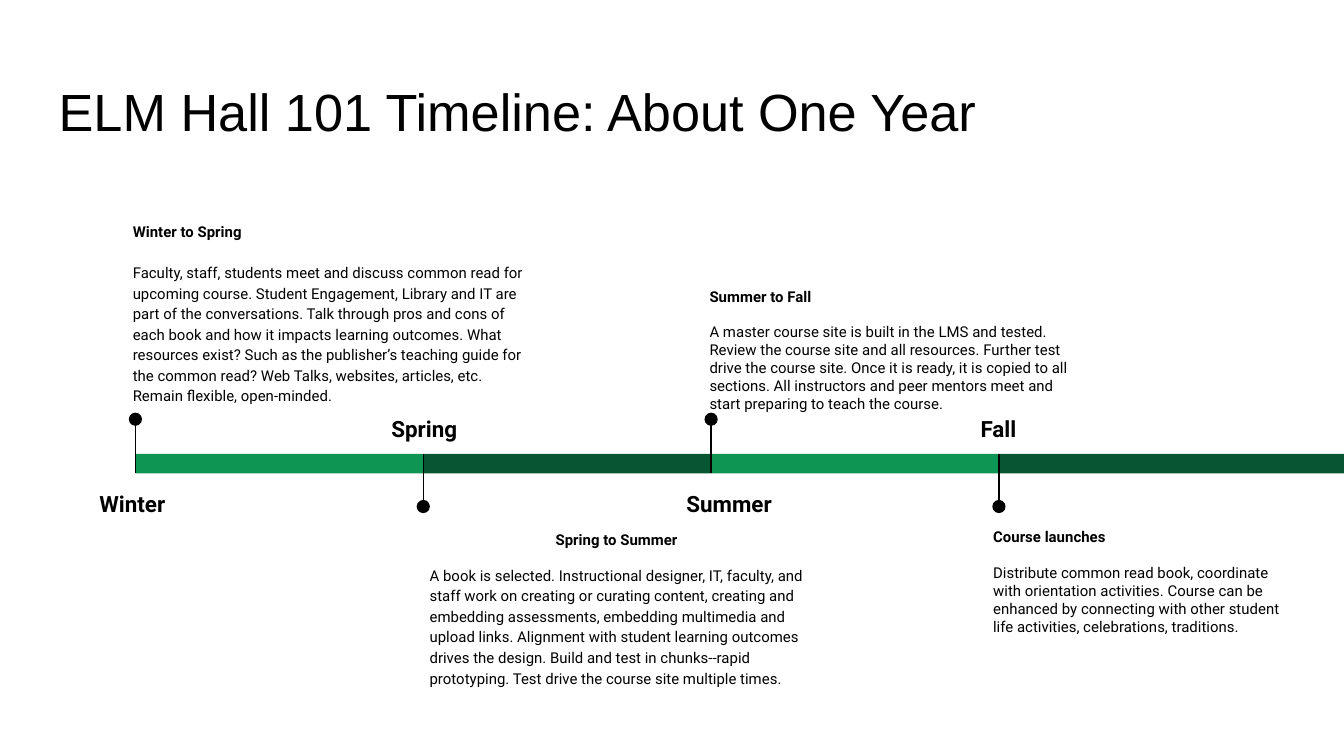
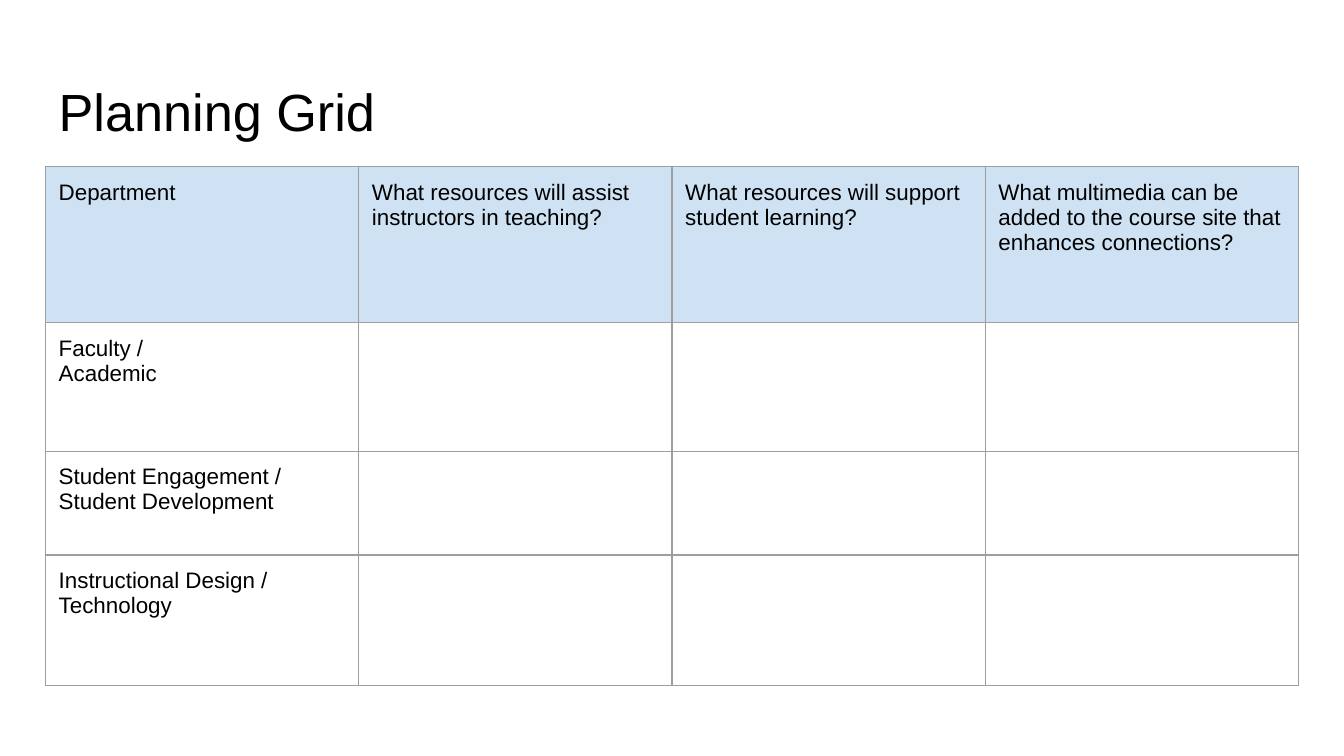
import pptx
import pptx.dml.color
import pptx.enum.shapes
import pptx.enum.text
import pptx.oxml
import pptx.oxml.ns
import pptx.util
from pptx.util import Cm

COLORS = {"text": "000000", "light": "0E9453", "dark": "085631",
          "header": "CFE2F3", "border": "9E9E9E"}
TITLE = {"name": "Arial", "size": 28}
LABEL = {"name": "Roboto", "size": 12, "bold": True}
HEADING = {"name": "Roboto", "size": 8, "bold": True}
BODY = {"name": "Roboto", "size": 8, "bold": False}
CELL = {"name": "Arial", "size": 12}
LEFT = pptx.enum.text.PP_ALIGN.LEFT
CENTER = pptx.enum.text.PP_ALIGN.CENTER
SHAPE = pptx.enum.shapes.MSO_SHAPE
INSET = 0.25


def rgb(name):
    return pptx.dml.color.RGBColor.from_string(COLORS[name])


class Deck:
    def __init__(self):
        self.prs = pptx.Presentation()
        self.prs.slide_width, self.prs.slide_height = Cm(25.4), Cm(14.29)
        self.s = None

    def slide(self, title):
        self.s = self.prs.slides.add_slide(self.prs.slide_layouts[5])
        sp = self.s.shapes.title
        sp.left, sp.top, sp.width, sp.height = Cm(0.86), Cm(1.24), Cm(23.67), Cm(1.6)
        tf = self.frame(sp)
        self.add_text(tf.paragraphs[0], title, TITLE)

    def frame(self, sp):
        tf = sp.text_frame
        settings = {"word_wrap": True,
                    "auto_size": pptx.enum.text.MSO_AUTO_SIZE.NONE,
                    "vertical_anchor": pptx.enum.text.MSO_ANCHOR.TOP}
        for side in ("left", "top", "right", "bottom"):
            settings["margin_" + side] = Cm(INSET)
        for key, value in settings.items():
            setattr(tf, key, value)
        return tf

    def add_text(self, p, text, font, **layout):
        r = p.add_run()
        r.text = text
        for key, value in font.items():
            setattr(r.font, key, pptx.util.Pt(value) if key == "size" else value)
        r.font.color.rgb = rgb("text")
        for key, value in {"alignment": LEFT, **layout}.items():
            setattr(p, key, value)

    def textbox(self, x, y, w, h):
        return self.frame(self.s.shapes.add_textbox(Cm(x), Cm(y), Cm(w), Cm(h)))

    def label(self, text, x, y, w):
        tf = self.textbox(x, y, w, 1.04)
        self.add_text(tf.paragraphs[0], text, LABEL, alignment=CENTER, line_spacing=1.15)

    def note(self, box, heading, body, gap, spacing, align):
        tf = self.textbox(*box)
        self.add_text(tf.paragraphs[0], heading, HEADING, alignment=align,
                      line_spacing=spacing, space_after=pptx.util.Pt(gap))
        self.add_text(tf.add_paragraph(), body, BODY, line_spacing=spacing)

    def shape(self, kind, color, x, y, w, h):
        sp = self.s.shapes.add_shape(kind, Cm(x), Cm(y), Cm(w), Cm(h))
        sp.shadow.inherit = False
        sp.fill.solid()
        sp.fill.fore_color.rgb = rgb(color)
        sp.line.fill.background()

    def line(self, x1, y1, x2, y2):
        cx = self.s.shapes.add_connector(pptx.enum.shapes.MSO_CONNECTOR.STRAIGHT,
                                         Cm(x1), Cm(y1), Cm(x2), Cm(y2))
        cx.line.color.rgb = rgb("text")
        cx.line.width = pptx.util.Pt(0.75)
        cx._element.spPr.append(pptx.oxml.parse_xml(
            "<a:effectLst %s/>" % pptx.oxml.ns.nsdecls("a")))

    def cell(self, cell, text, filled):
        for side in ("left", "top", "right", "bottom"):
            setattr(cell, "margin_" + side, Cm(INSET))
        tcPr = cell._tc.get_or_add_tcPr()
        for edge in "LRTB":
            tcPr.append(pptx.oxml.parse_xml(
                '<a:ln%s %s w="9525"><a:solidFill><a:srgbClr val="%s"/></a:solidFill></a:ln%s>'
                % (edge, pptx.oxml.ns.nsdecls("a"), COLORS["border"], edge)))
        if filled:
            cell.fill.solid()
            cell.fill.fore_color.rgb = rgb("header")
        else:
            cell.fill.background()
        tf = cell.text_frame
        for i, line in enumerate(text.split("\n") if text else []):
            self.add_text(tf.add_paragraph() if i else tf.paragraphs[0], line, CELL)

    def table(self, x, y, col_width, heights, rows):
        cols = len(rows[0])
        table = self.s.shapes.add_table(len(rows), cols, Cm(x), Cm(y),
                                        Cm(col_width * cols), Cm(sum(heights))).table
        table.first_row = table.horz_banding = False
        for column in table.columns:
            column.width = Cm(col_width)
        for i, (height, texts) in enumerate(zip(heights, rows)):
            table.rows[i].height = Cm(height)
            for j, text in enumerate(texts):
                self.cell(table.cell(i, j), text, filled=i == 0)


# label, label left and width, note box, heading, body, gap, line spacing, heading alignment
SEASONS = [
    ("Winter ", 1.35, 2.41, (2.26, 3.91, 7.98, 3.89), "Winter to Spring",
     "Faculty, staff, students meet and discuss common read for upcoming course. "
     "Student Engagement, Library and IT are part of the conversations. Talk through "
     "pros and cons of each book and how it impacts learning outcomes. What resources "
     "exist? Such as the publisher’s teaching guide for the common read? Web Talks, "
     "websites, articles, etc. Remain flexible, open-minded.", 11, 1.15, LEFT),
    ("Spring", 6.98, 2.08, (7.87, 9.73, 7.57, 3.53), "Spring to Summer",
     "A book is selected. Instructional designer, IT, faculty, and staff work on "
     "creating or curating content, creating and embedding assessments, embedding "
     "multimedia and upload links. Alignment with student learning outcomes drives the "
     "design. Build and test in chunks--rapid prototyping. Test drive the course site "
     "multiple times.", 8.25, 1.15, CENTER),
    ("Summer", 12.55, 2.46, (13.16, 5.18, 7.34, 2.62), "Summer to Fall",
     "A master course site is built in the LMS and tested. Review the course site and "
     "all resources. Further test drive the course site. Once it is ready, it is copied "
     "to all sections. All instructors and peer mentors meet and start preparing to "
     "teach the course.", 9.5, 1.0, LEFT),
    ("Fall", 17.83, 2.08, (18.52, 9.73, 6.25, 2.62), "Course launches",
     "Distribute common read book, coordinate with orientation activities. Course can "
     "be enhanced by connecting with other student life activities, celebrations, "
     "traditions.", 9.5, 1.0, LEFT),
]

GRID = [
    ["Department", "What resources will assist instructors in teaching?",
     "What resources will support student learning?",
     "What multimedia can be added to the course site that enhances connections?"],
    ["Faculty /\nAcademic", "", "", ""],
    ["Student Engagement /\nStudent Development", "", "", ""],
    ["Instructional Design /\nTechnology", "", "", ""],
]


def timeline(deck):
    deck.slide("ELM Hall 101 Timeline: About One Year")
    start, step, bar_top, bar_height, dot = 2.56, 5.44, 8.58, 0.37, 0.25
    bar_bottom = bar_top + bar_height
    for i, (label, label_x, label_w, *note) in enumerate(SEASONS):
        x = start + i * step
        above = i % 2 == 0
        width = 25.4 - x if i == len(SEASONS) - 1 else step
        deck.shape(SHAPE.RECTANGLE, "light" if above else "dark",
                   x, bar_top, width, bar_height)
        dot_top, pin_end, label_y = (7.8, bar_bottom, 8.94) if above else (9.45, bar_top, 7.52)
        deck.line(x, dot_top + dot / 2, x, pin_end)
        deck.shape(SHAPE.OVAL, "text", x - dot / 2, dot_top, dot, dot)
        deck.label(label, label_x, label_y, label_w)
        deck.note(*note)


def planning_grid(deck):
    deck.slide("Planning Grid")
    deck.table(0.86, 3.15, 5.92, [2.95, 2.43, 1.96, 2.47], GRID)


def main():
    deck = Deck()
    timeline(deck)
    planning_grid(deck)
    deck.prs.save("out.pptx")


if __name__ == "__main__":
    main()
